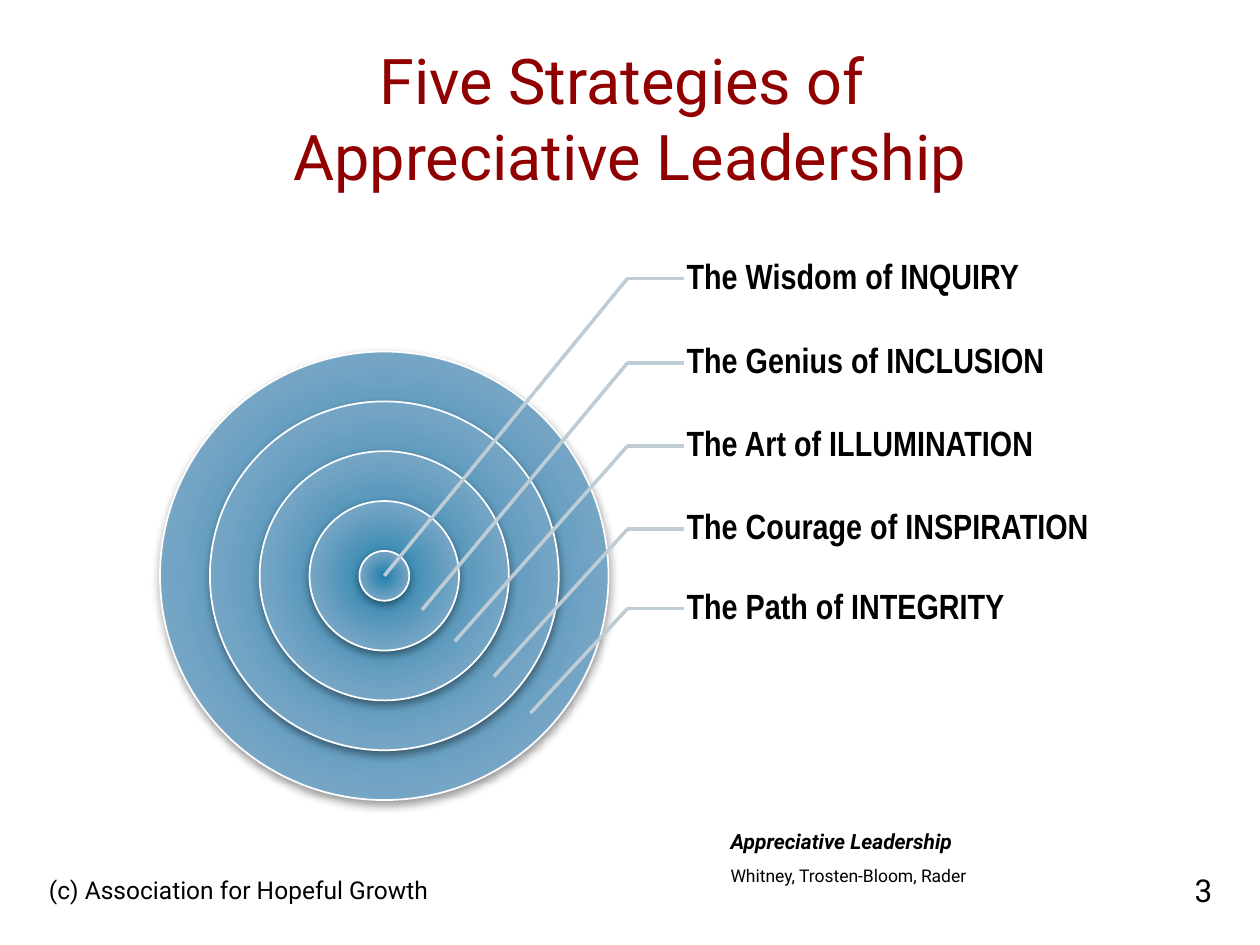
from lxml import etree
from pptx import Presentation
from pptx.dml.color import RGBColor
from pptx.enum.shapes import MSO_CONNECTOR, MSO_SHAPE
from pptx.enum.text import MSO_ANCHOR, MSO_AUTO_SIZE, PP_ALIGN
from pptx.oxml import parse_xml
from pptx.oxml.ns import qn
from pptx.util import Inches, Pt

LINE, OVAL = MSO_CONNECTOR.STRAIGHT, MSO_SHAPE.OVAL
LEFT, MID, RIGHT = PP_ALIGN.LEFT, PP_ALIGN.CENTER, PP_ALIGN.RIGHT
TOP, HALF, BASE = MSO_ANCHOR.TOP, MSO_ANCHOR.MIDDLE, MSO_ANCHOR.BOTTOM

COLORS = {"title": "900000", "text": "000000", "edge": "FFFFFF", "lead": "BECCD6",
          "core": "2080AB", "ring": "75A5C5", "rim": "B8CCDC"}
NS = 'xmlns:a="http://schemas.openxmlformats.org/drawingml/2006/main"'
GRAD = f"""<a:gradFill {NS} rotWithShape="1"><a:gsLst>
<a:gs pos="0"><a:srgbClr val="{COLORS['core']}"/></a:gs>
<a:gs pos="69000"><a:srgbClr val="{COLORS['ring']}"/></a:gs>
<a:gs pos="100000"><a:srgbClr val="{COLORS['rim']}"/></a:gs></a:gsLst>
<a:path path="circle"><a:fillToRect l="100000" t="100000" r="100000" b="100000"/></a:path>
</a:gradFill>"""
SHADOW = f"""<a:effectLst {NS}><a:outerShdw blurRad="{Pt(5)}" dist="{Pt(2)}" dir="5400000"
rotWithShape="0"><a:srgbClr val="000000"><a:alpha val="40000"/></a:srgbClr>
</a:outerShdw></a:effectLst>"""

prs = Presentation()
prs.slide_width, prs.slide_height = Inches(10), Inches(7.5)
slide = prs.slides.add_slide(prs.slide_layouts[5])
shapes = slide.shapes


def style(para, size, face="Roboto", color="text", align=LEFT, bold=False, slant=False):
    para.alignment = align
    font = para.font
    font.name, font.size, font.bold, font.italic = face, Pt(size), bold, slant
    font.color.rgb = RGBColor.from_string(COLORS[color])


def write(text, x, y, w, h, anchor=HALF):
    box = shapes.add_textbox(Inches(x), Inches(y), Inches(w), Inches(h))
    frame = box.text_frame
    frame.word_wrap = True
    frame.vertical_anchor = anchor
    frame.text = text
    return frame


# Title
title = shapes.title
title.left, title.top = Inches(0.6), Inches(0.12)
title.width, title.height = Inches(8.8), Inches(1.46)
frame = title.text_frame
frame.text = "Five Strategies of \vAppreciative Leadership"
frame.auto_size = MSO_AUTO_SIZE.NONE
frame.vertical_anchor = BASE
style(frame.paragraphs[0], 36, color="title", align=MID)

# Concentric rings, largest first
mid_x, mid_y, wide = 3.05, 4.57, 3.56
for part in (9, 7, 5, 3, 1):
    size = wide * part / 9
    ring = shapes.add_shape(OVAL, Inches(mid_x - size / 2), Inches(mid_y - size / 2),
                            Inches(size), Inches(size))
    ring.line.color.rgb = RGBColor.from_string(COLORS["edge"])
    ring.line.width = Pt(1)
    props = ring._element.spPr
    props.find(qn("a:prstGeom")).addnext(parse_xml(GRAD))
    props.append(parse_xml(SHADOW))

# Labels with bent leader lines: label, height, ring end
bend, stop = 4.98, 5.43
labels = [
    ("The Wisdom of INQUIRY", 2.21, (3.05, 4.57)),
    ("The Genius of INCLUSION", 2.88, (3.35, 4.84)),
    ("The Art of ILLUMINATION", 3.54, (3.61, 5.09)),
    ("The Courage of INSPIRATION", 4.2, (3.92, 5.37)),
    ("The Path of INTEGRITY", 4.83, (4.21, 5.66)),
]
for text, y, tip in labels:
    frame = write(text, stop, y - 0.32, 3.6, 0.63)
    frame.margin_left = Inches(0.02)
    style(frame.paragraphs[0], 20, "Arial Narrow", bold=True)
    frame.paragraphs[0].line_spacing = 0.9
    for end_x, end_y in ((stop, y), tip):
        lead = shapes.add_connector(LINE, Inches(bend), Inches(y),
                                    Inches(end_x), Inches(end_y))
        lead.line.color.rgb = RGBColor.from_string(COLORS["lead"])
        lead.line.width = Pt(2)
        etree.SubElement(lead._element.spPr, qn("a:effectLst"))

# Footer and page number
frame = write("(c) Association for Hopeful Growth", 0.29, 6.86, 5.29, 0.4)
style(frame.paragraphs[0], 14)
frame = write("3", 8.64, 6.86, 1.08, 0.4)
style(frame.paragraphs[0], 18, align=RIGHT)

# Book credit
frame = write("Appreciative Leadership\nWhitney, Trosten-Bloom, Rader", 5.7, 6.53, 3.7, 0.56, TOP)
book, names = frame.paragraphs
style(book, 12, bold=True, slant=True)
style(names, 10)
book.space_after = names.space_after = Pt(6)

prs.save("out.pptx")
